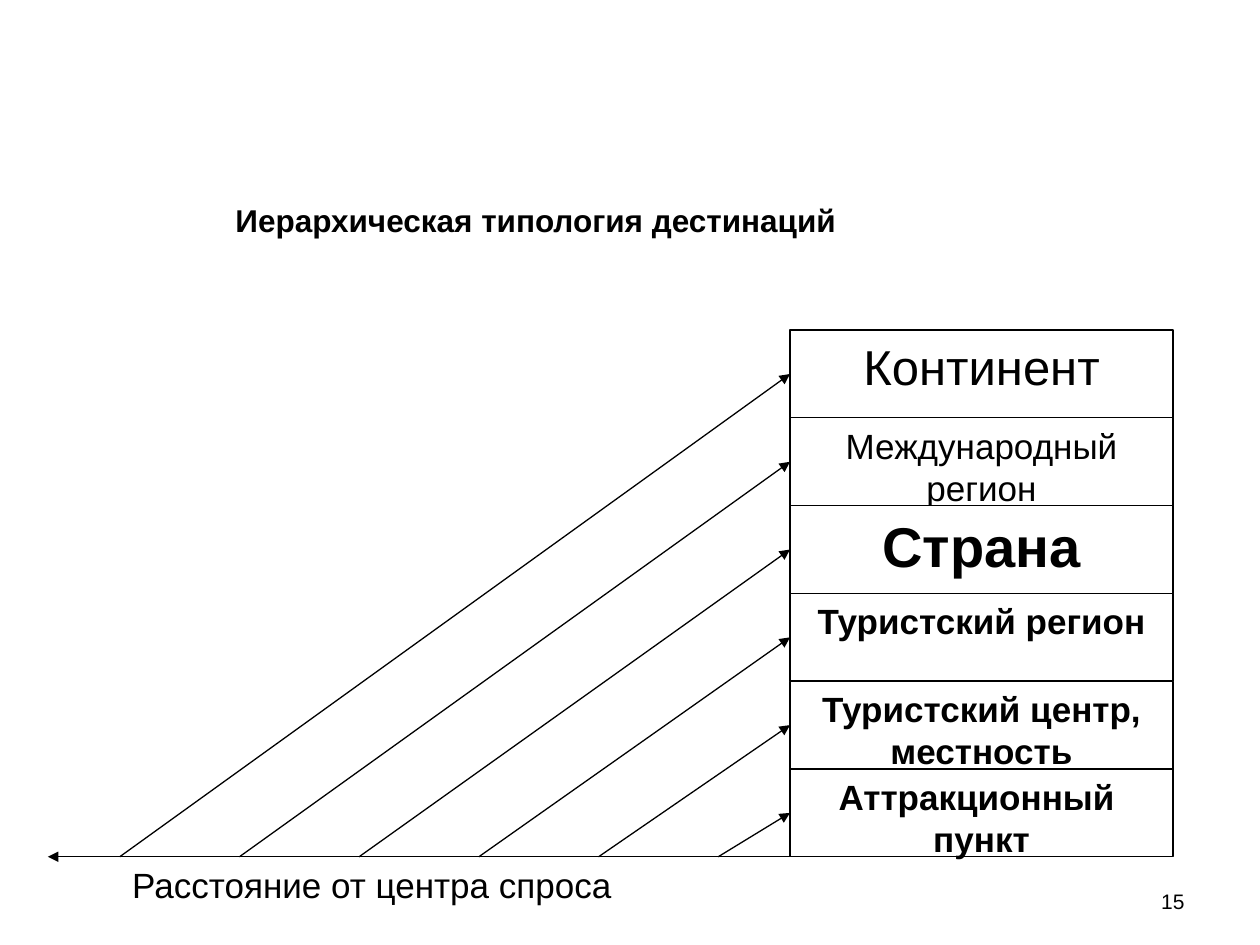
from pptx import Presentation
from pptx.dml.color import RGBColor
from pptx.enum.shapes import MSO_CONNECTOR as Connector, MSO_SHAPE as Shape
from pptx.enum.text import MSO_ANCHOR as Anchor, MSO_AUTO_SIZE as AutoSize, PP_ALIGN as Align
from pptx.oxml.ns import qn
from pptx.util import Inches, Pt
from lxml import etree


def color(hex_code):
    return RGBColor.from_string(hex_code)


def write(frame, text, size=20, bold=False, align=Align.LEFT,
          anchor=Anchor.TOP, wrap=True, ink="000000", font="Arial"):
    frame.word_wrap = wrap
    frame.vertical_anchor = anchor
    for index, line in enumerate(text.split("\n")):
        paragraph = frame.add_paragraph() if index else frame.paragraphs[0]
        paragraph.alignment = align
        run = paragraph.add_run()
        run.text = line
        run.font.name = font
        run.font.size = Pt(size)
        run.font.bold = bold
        run.font.color.rgb = color(ink)


class Diagram:
    ink = "000000"
    paper = "FFFFFF"
    stroke = Pt(0.75)

    def __init__(self, slide):
        self.shapes = slide.shapes

    def label(self, text, left, top, width, height, **style):
        frame = self.shapes.add_textbox(
            Inches(left), Inches(top), Inches(width), Inches(height)).text_frame
        write(frame, text, ink=self.ink, **style)
        return frame

    def box(self, text, left, top, width, height, **style):
        box = self.shapes.add_shape(
            Shape.RECTANGLE, Inches(left), Inches(top), Inches(width), Inches(height))
        box.shadow.inherit = False
        box.fill.solid()
        box.fill.fore_color.rgb = color(self.paper)
        box.line.color.rgb = color(self.ink)
        box.line.width = self.stroke
        write(box.text_frame, text, ink=self.ink, align=Align.CENTER, **style)
        return box

    def arrow(self, x1, y1, x2, y2, target=None):
        arrow = self.shapes.add_connector(
            Connector.STRAIGHT, Inches(x1), Inches(y1), Inches(x2), Inches(y2))
        if target is not None:
            arrow.end_connect(target, 1)
        arrow.line.color.rgb = color(self.ink)
        arrow.line.width = self.stroke
        line = arrow.line._get_or_add_ln()
        etree.SubElement(line, qn("a:tailEnd"), type="triangle")
        etree.SubElement(arrow._element.spPr, qn("a:effectLst"))


LEVELS = [
    ("Континент", 28, False),
    ("Международный\nрегион", 20, False),
    ("Страна", 32, True),
    ("Туристский регион", 20, True),
    ("Туристский центр, местность", 20, True),
    ("Аттракционный \nпункт", 20, True),
]
STACK_LEFT, STACK_TOP, STACK_WIDTH = 6.27, 2.62, 3.04
AXIS_Y, AXIS_END, DISTANCE_STEP = 6.8, 0.38, 0.95


def main():
    presentation = Presentation()
    presentation.slide_width = Inches(10)
    presentation.slide_height = Inches(7.5)
    diagram = Diagram(presentation.slides.add_slide(presentation.slide_layouts[6]))

    diagram.label("15", 7.17, 6.95, 2.33, 0.4, size=12,
                  align=Align.RIGHT, anchor=Anchor.MIDDLE)

    level_height = (AXIS_Y - STACK_TOP) / len(LEVELS)
    levels = [
        diagram.box(text, STACK_LEFT, STACK_TOP + row * level_height,
                    STACK_WIDTH, level_height, size=size, bold=bold)
        for row, (text, size, bold) in enumerate(LEVELS)
    ]

    diagram.arrow(STACK_LEFT, AXIS_Y, AXIS_END, AXIS_Y)
    for row, level in enumerate(levels):
        diagram.arrow((row + 1) * DISTANCE_STEP, AXIS_Y, STACK_LEFT,
                      STACK_TOP + (row + 0.5) * level_height, target=level)

    diagram.label("Расстояние от центра спроса", DISTANCE_STEP, AXIS_Y, 5.32, 0.52)
    heading = diagram.label("Иерархическая типология дестинаций", 1.77, 1.55, 5.02, 0.4,
                            size=18, bold=True, wrap=False)
    heading.auto_size = AutoSize.SHAPE_TO_FIT_TEXT

    presentation.save("out.pptx")


if __name__ == "__main__":
    main()
